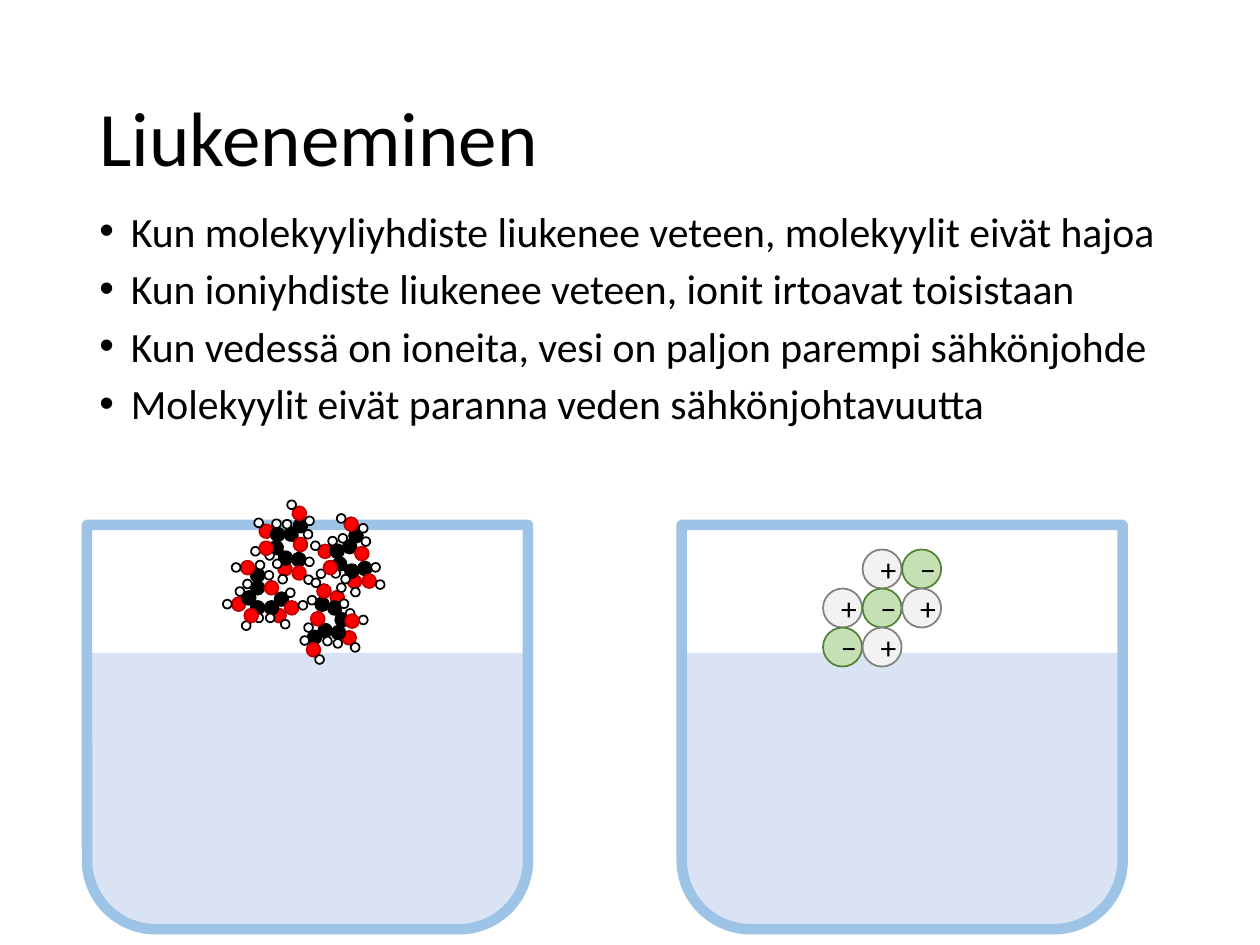
"""Build the slide on dissolving molecules and ions in water."""
from typing import NamedTuple, Optional

from lxml.etree import SubElement as Sub
from pptx import Presentation
from pptx.dml.color import RGBColor
from pptx.enum.shapes import MSO_SHAPE as Kind
from pptx.enum.text import MSO_ANCHOR as Anchor, PP_ALIGN as Align
from pptx.oxml.ns import qn
from pptx.util import Pt


class Box(NamedTuple):
    """A frame in points."""
    left: float
    top: float
    width: float
    height: float


class Look(NamedTuple):
    """Fill, line and line width of a shape."""
    fill: Optional[str]
    line: Optional[str] = None
    width: float = 1


class Atom(NamedTuple):
    """An atom placed inside its molecule."""
    kind: str
    left: float
    top: float


class Cluster(NamedTuple):
    """A molecule's corner and turn in degrees."""
    left: float
    top: float
    turn: float


FONT = "Calibri"
LINES = [
    "Kun molekyyliyhdiste liukenee veteen, molekyylit eivät hajoa",
    "Kun ioniyhdiste liukenee veteen, ionit irtoavat toisistaan",
    "Kun vedessä on ioneita, vesi on paljon parempi sähkönjohde",
    "Molekyylit eivät paranna veden sähkönjohtavuutta",
]
WATER = Look("DAE3F3")
GLASS = Look(None, "9DC3E6", 6)
LOOKS = {
    "H": Look("FFFFFF", "000000"),
    "O": Look("FF0000", "C00000"),
    "C": Look("000000", "000000"),
    "+": Look("F2F2F2", "808080"),
    "−": Look("C5E0B4", "548235"),
}
SIZES = {"H": 5.04, "O": 7.92, "C": 7.92}
ATOMS = [
    Atom("H", 10.8, 34.6), Atom("O", 5, 20.9), Atom("O", 28.1, 27.4),
    Atom("C", 15.8, 11.5), Atom("C", 10.8, 17.3), Atom("C", 15.8, 23),
    Atom("C", 23.8, 23), Atom("C", 29.5, 18), Atom("C", 15.8, 4.3),
    Atom("O", 23.8, 11.5), Atom("O", 10.1, 0), Atom("O", 35.3, 23),
    Atom("H", 43.2, 23), Atom("H", 36, 15.8), Atom("H", 33.1, 33.8),
    Atom("H", 0, 22.3), Atom("H", 7.2, 15.1), Atom("H", 11.5, 10.8),
    Atom("H", 18.7, 0), Atom("H", 23.8, 5.8), Atom("H", 5, 1.4),
    Atom("H", 18, 30.2), Atom("H", 24.5, 30.2), Atom("O", 12.2, 27.4),
]
FIRST = Cluster(127.4, 320.4, 0)
OTHERS = [
    Cluster(141.9, 291.6, 47.8),
    Cluster(163.1, 334.5, 237.8),
    Cluster(177.3, 298.5, 30),
]
IONS = [" +−", "+−+", "−+ "]
ION, STEP = 22.3, 22.6


def tint(code: str) -> RGBColor:
    """Turn a hex string into a colour."""
    return RGBColor.from_string(code)


def style(para, size: float) -> None:
    """Set the font of a paragraph's runs."""
    for run in para.runs:
        run.font.name = FONT
        run.font.size = Pt(size)
        run.font.color.rgb = tint("000000")


def draw(shapes, kind, box: Box, look: Look):
    """Add a preset shape with its look."""
    shape = shapes.add_shape(kind, *map(Pt, box))
    shape.shadow.inherit = False
    if look.fill:
        shape.fill.solid()
        shape.fill.fore_color.rgb = tint(look.fill)
    else:
        shape.fill.background()
    if look.line:
        shape.line.color.rgb = tint(look.line)
        shape.line.width = Pt(look.width)
    else:
        shape.line.fill.background()
    return shape


def vessel(shapes, box: Box, look: Look, curve: float) -> None:
    """Draw a body with a rounded bottom."""
    shape = draw(shapes, Kind.ROUND_2_SAME_RECTANGLE, box, look)
    shape.adjustments[0] = curve
    shape.rotation = 180


def water(shapes, left: float) -> None:
    """Draw the water of a beaker."""
    vessel(shapes, Box(left, 373, 252, 156.2), WATER, 0.235)


def glass(shapes, left: float) -> None:
    """Draw the wall of a beaker."""
    vessel(shapes, Box(left, 299.9, 252, 231.1), GLASS, 0.17)


def cluster(shapes, spot: Cluster) -> None:
    """Draw one molecule as a turned group."""
    group = shapes.add_group_shape()
    for atom in ATOMS:
        size = SIZES[atom.kind]
        box = Box(spot.left + atom.left, spot.top + atom.top, size, size)
        draw(group.shapes, Kind.OVAL, box, LOOKS[atom.kind])
    group.rotation = spot.turn


def lattice(shapes, left: float, top: float) -> None:
    """Draw the grid of ions."""
    for row, signs in enumerate(IONS):
        for col, sign in enumerate(signs):
            if sign == " ":
                continue
            box = Box(left + col * STEP, top + row * ION, ION, ION)
            frame = draw(shapes, Kind.OVAL, box, LOOKS[sign]).text_frame
            frame.text = sign
            frame.vertical_anchor = Anchor.MIDDLE
            para = frame.paragraphs[0]
            para.alignment = Align.CENTER
            style(para, 18)


def place(shape, box: Box) -> None:
    """Move a shape into a frame."""
    shape.left, shape.top, shape.width, shape.height = map(Pt, box)


def head(title) -> None:
    """Fill the title."""
    place(title, Box(49.7, 28.8, 620.6, 104.4))
    frame = title.text_frame
    frame.text = "Liukeneminen"
    frame.vertical_anchor = Anchor.MIDDLE
    para = frame.paragraphs[0]
    para.alignment = Align.LEFT
    para.line_spacing = 0.9
    style(para, 44)


def points(shapes) -> None:
    """Write the bullet list."""
    box = Box(49.7, 119.5, 620.6, 167.8)
    frame = shapes.add_textbox(*map(Pt, box)).text_frame
    frame.word_wrap = True
    frame.text = "\n".join(LINES)
    for rank, para in enumerate(frame.paragraphs):
        props = para._p.get_or_add_pPr()
        props.set("marL", str(Pt(18)))
        props.set("indent", str(-Pt(18)))
        Sub(props, qn("a:buFont"), typeface="Arial")
        Sub(props, qn("a:buChar"), char="•")
        para.line_spacing = 0.8
        if rank:
            para.space_before = Pt(10)
        style(para, 23.8)


def main() -> None:
    """Build and save the slide."""
    deck = Presentation()
    deck.slide_width, deck.slide_height = Pt(720), Pt(540)
    shapes = deck.slides.add_slide(deck.slide_layouts[5]).shapes
    left, right = 49.7, 389.5
    head(shapes.title)
    water(shapes, left)
    points(shapes)
    cluster(shapes, FIRST)
    glass(shapes, left)
    for spot in OTHERS:
        cluster(shapes, spot)
    water(shapes, right)
    glass(shapes, right)
    lattice(shapes, 470.3, 314)
    deck.save("out.pptx")


if __name__ == "__main__":
    main()
